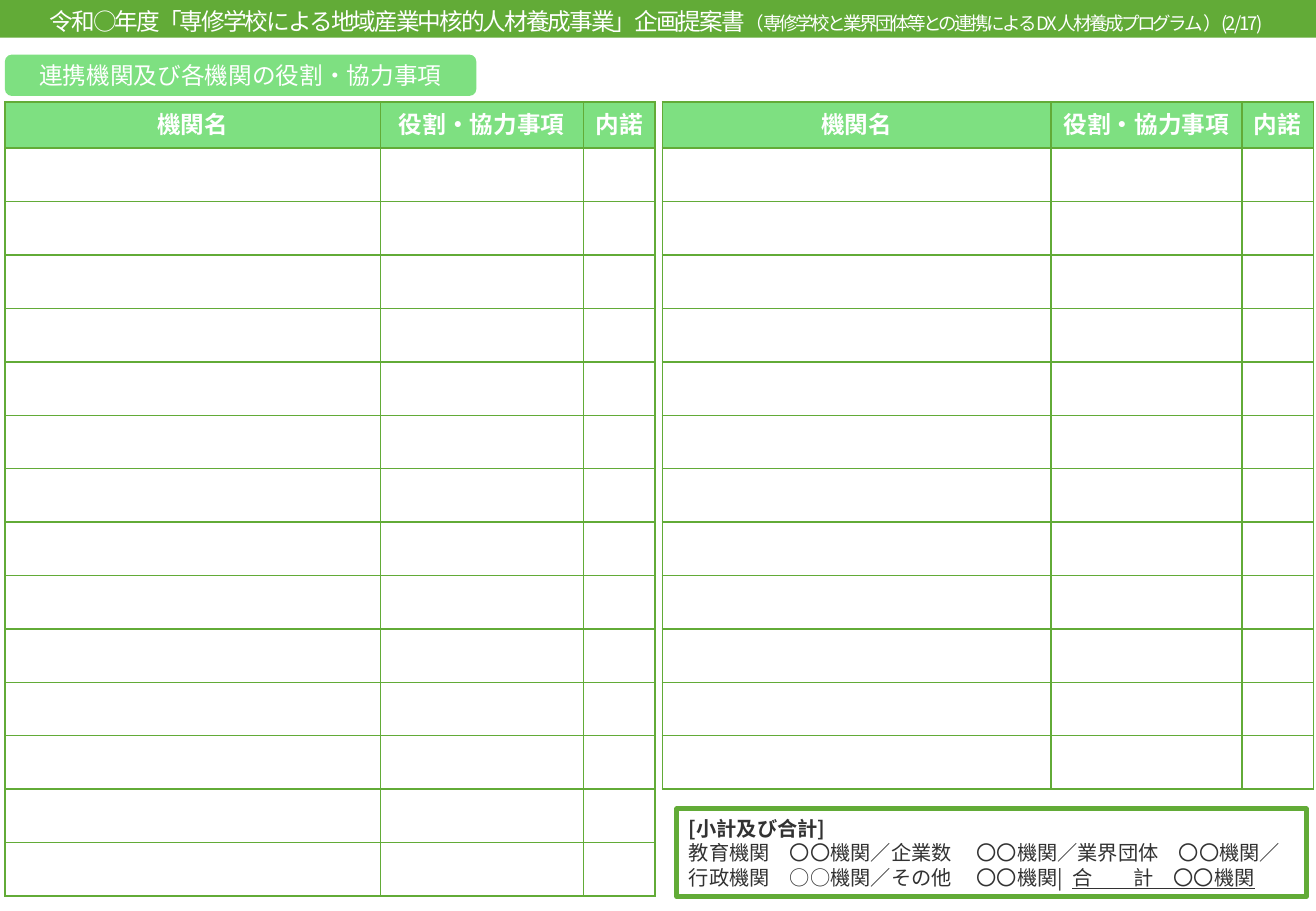
from lxml import etree
from pptx import Presentation
from pptx.dml.color import RGBColor
from pptx.enum.shapes import MSO_SHAPE
from pptx.enum.text import MSO_ANCHOR, PP_ALIGN
from pptx.oxml.ns import qn
from pptx.util import Inches, Pt

RECTANGLE, ROUNDED = MSO_SHAPE.RECTANGLE, MSO_SHAPE.ROUNDED_RECTANGLE
MIDDLE, TOP = MSO_ANCHOR.MIDDLE, MSO_ANCHOR.TOP
LEFT, CENTER = PP_ALIGN.LEFT, PP_ALIGN.CENTER
GREEN, MINT, WHITE, INK = "62AB37", "7EE081", "FFFFFF", "323232"
HEADINGS = ["機関名", "役割・協力事項", "内諾"]


def color(hex_string):
    return RGBColor.from_string(hex_string)


class ProposalPage:
    """Draws styled elements on one page, measured in grid cells of a tenth of an inch."""

    cell_size = 0.1
    body_font = "Noto Sans CJK JP"
    table_font = "Karla"

    def __init__(self, columns, rows):
        self.deck = Presentation()
        self.deck.slide_width, self.deck.slide_height = self.grid(columns, rows)
        self.page = self.deck.slides.add_slide(self.deck.slide_layouts[6])

    def grid(self, *cells):
        return [Inches(cell * self.cell_size) for cell in cells]

    def style(self, span, size, ink, font, bold=False, underline=False, spacing=0):
        span.font.size = Pt(size)
        span.font.name = font
        span.font.bold = bold
        span.font.underline = underline
        span.font.color.rgb = color(ink)
        properties = span.font._element
        etree.SubElement(properties, qn("a:ea")).set("typeface", font)
        if spacing:
            properties.set("spc", str(round(spacing * 100)))

    def fill_para(self, para, spans, align=LEFT, size=14, ink=WHITE, font=body_font):
        para.alignment = align
        for text, changes in spans:
            span = para.add_run()
            span.text = text
            self.style(span, **{"size": size, "ink": ink, "font": font, **changes})

    def shape(self, kind, place, fill=None, line=None, weight=3):
        box = self.page.shapes.add_shape(kind, *self.grid(*place))
        box.shadow.inherit = False
        if fill:
            box.fill.solid()
            box.fill.fore_color.rgb = color(fill)
        else:
            box.fill.background()
        if line:
            box.line.color.rgb = color(line)
            box.line.width = Pt(weight)
        else:
            box.line.fill.background()
        box.text_frame.word_wrap = True
        box.text_frame.vertical_anchor = MIDDLE
        return box

    def label(self, place, text, fill):
        box = self.shape(ROUNDED, place, fill)
        self.fill_para(box.text_frame.paragraphs[0], [(text, {})], CENTER)

    def summary(self, place, lines, line):
        frame = self.shape(RECTANGLE, place, line=line).text_frame
        for index, spans in enumerate(lines):
            para = frame.add_paragraph() if index else frame.paragraphs[0]
            para.line_spacing = Pt(14.5)
            self.fill_para(para, spans, size=12, ink=INK)

    def title(self, place, spans):
        frame = self.page.shapes.add_textbox(*self.grid(*place)).text_frame
        frame.word_wrap = True
        frame.vertical_anchor = TOP
        self.fill_para(frame.paragraphs[0], spans, CENTER)

    def border(self, cell, ink, weight=1):
        properties = cell._tc.get_or_add_tcPr()
        for index, side in enumerate(("a:lnL", "a:lnR", "a:lnT", "a:lnB")):
            edge = etree.Element(qn(side), w=str(Pt(weight)))
            fill = etree.SubElement(edge, qn("a:solidFill"))
            etree.SubElement(fill, qn("a:srgbClr")).set("val", ink)
            properties.insert(index, edge)

    def table(self, left, top, widths, blank_rows, head_height=3.8, row_height=4.4):
        heights = [head_height] + [row_height] * blank_rows
        place = self.grid(left, top, sum(widths), sum(heights))
        table = self.page.shapes.add_table(len(heights), len(widths), *place).table
        table.horz_banding = False
        for column, width in zip(table.columns, self.grid(*widths)):
            column.width = width
        for row, height in zip(table.rows, self.grid(*heights)):
            row.height = height
        for cell in table.iter_cells():
            cell.fill.background()
            self.border(cell, GREEN)
        for cell, heading in zip(table.rows[0].cells, HEADINGS):
            cell.fill.solid()
            cell.fill.fore_color.rgb = color(MINT)
            cell.vertical_anchor = MIDDLE
            para = cell.text_frame.paragraphs[0]
            self.fill_para(para, [(heading, {"bold": True})], CENTER, font=self.table_font)


def main():
    proposal = ProposalPage(108.3, 75)
    proposal.label((0.4, 4.5, 38.8, 3.4), "連携機関及び各機関の役割・協力事項", MINT)
    proposal.summary((55.7, 66.6, 51.8, 7.2), [
        [("[小計及び合計]", {"bold": True})],
        [("教育機関　〇〇機関／企業数　 〇〇機関／業界団体　〇〇機関／", {})],
        [("行政機関　○○機関／その他　 〇〇機関|  ", {}),
         ("合　　計　〇〇機関", {"underline": True})],
    ], GREEN)
    proposal.table(0.4, 8.4, (30.9, 16.7, 5.9), 14)
    proposal.table(54.5, 8.4, (32, 15.7, 5.9), 12)
    proposal.shape(RECTANGLE, (0, 0, 108.3, 3.1), GREEN)
    proposal.title((0, 0.1, 108, 3.4), [
        ("令和○年度「専修学校による地域産業中核的人材養成事業」企画提案書", {"spacing": -1.2}),
        ("（", {"size": 11, "spacing": -1.2}),
        ("専修学校と業界団体等との連携によるDX人材養成プログラム", {"size": 11, "spacing": -1.6}),
        ("）(2/17)", {"size": 11, "spacing": -1.2}),
    ])
    proposal.deck.save("out.pptx")


if __name__ == "__main__":
    main()
